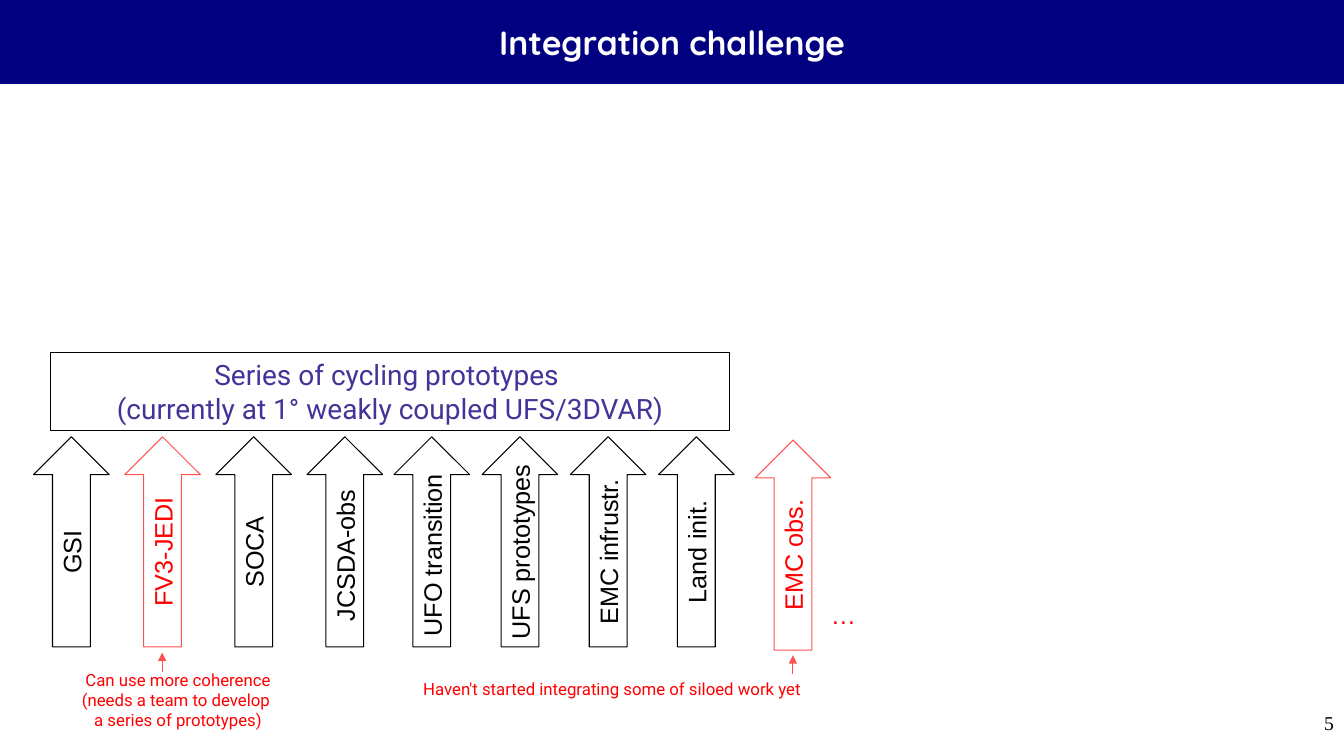
import pptx
import pptx.dml.color
import pptx.enum.dml
import pptx.enum.shapes
import pptx.enum.text
import pptx.oxml
import pptx.oxml.ns
import pptx.util

COLORS = {
    "banner": "000080",
    "white": "FFFFFF",
    "black": "000000",
    "red": "FF0000",
    "coral": "FF5050",
    "indigo": "453399",
}
CELL = pptx.util.Inches(1) / 12
COLUMNS, ROWS = 160, 90
ARROW_WIDTH, ARROW_HEIGHT = 9, 25
LABEL_HEIGHT, LABEL_DROP = 4.8, 1.2
ALIGN = pptx.enum.text.PP_ALIGN
PRESETS = pptx.enum.shapes.MSO_SHAPE


def cells(*lengths):
    return [round(length * CELL) for length in lengths]


def rgb(name):
    return pptx.dml.color.RGBColor.from_string(COLORS[name])


def write(shape, text, font, size, color, align=ALIGN.CENTER, bold=False):
    shape.text_frame.text = text
    for paragraph in shape.text_frame.paragraphs:
        paragraph.alignment = align
        for run in paragraph.runs:
            run.font.name = font
            run.font.size = pptx.util.Pt(size)
            run.font.bold = bold
            run.font.color.rgb = rgb(color)


def add_text(slide, box, text, font, size, color, align=ALIGN.CENTER):
    shape = slide.shapes.add_textbox(*cells(*box))
    write(shape, text, font, size, color, align)
    shape.text_frame.word_wrap = False
    shape.text_frame.auto_size = pptx.enum.text.MSO_AUTO_SIZE.SHAPE_TO_FIT_TEXT
    return shape


def add_outline(slide, preset, box, color):
    shape = slide.shapes.add_shape(preset, *cells(*box))
    shape.shadow.inherit = False
    shape.fill.background()
    shape.line.color.rgb = rgb(color)
    shape.line.width = pptx.util.Pt(0.75)
    return shape


def add_banner(slide, box, text):
    title = slide.shapes.title
    title.left, title.top, title.width, title.height = cells(*box)
    title.fill.solid()
    title.fill.fore_color.rgb = rgb("banner")
    write(title, text, "Quicksand", 24, "white", bold=True)
    title.text_frame.vertical_anchor = pptx.enum.text.MSO_ANCHOR.MIDDLE


def add_input_arrow(slide, left, top, label, length, pending=False, shift=0):
    box = (left, top, ARROW_WIDTH, ARROW_HEIGHT)
    add_outline(slide, PRESETS.UP_ARROW, box, "coral" if pending else "black")
    center = left + ARROW_WIDTH / 2
    middle = top + ARROW_HEIGHT / 2 + LABEL_DROP + shift
    label_box = (center - length / 2, middle - LABEL_HEIGHT / 2, length, LABEL_HEIGHT)
    text = add_text(slide, label_box, label, "Arial", 18, "red" if pending else "black")
    text.rotation = 270


def add_arrow_row(slide, left, top, pitch, inputs):
    for index, details in enumerate(inputs):
        add_input_arrow(slide, left + index * pitch, top, *details)


def add_prototype_box(slide, box, text):
    shape = add_outline(slide, PRESETS.RECTANGLE, box, "black")
    write(shape, text, "Roboto", 20, "indigo")
    shape.text_frame.vertical_anchor = pptx.enum.text.MSO_ANCHOR.TOP


def add_note(slide, box, text, align, pointer_column, pointer_bottom):
    add_text(slide, box, text, "Roboto", 12, "red", align)
    ends = cells(pointer_column, pointer_bottom, pointer_column, pointer_bottom - 2.3)
    pointer = slide.shapes.add_connector(pptx.enum.shapes.MSO_CONNECTOR.STRAIGHT, *ends)
    pointer.line.color.rgb = rgb("coral")
    pointer.line.width = pptx.util.Pt(0.75)
    properties = pointer.line._get_or_add_ln()
    tip = pptx.oxml.parse_xml(f'<a:tailEnd {pptx.oxml.ns.nsdecls("a")} type="triangle"/>')
    properties.append(tip)
    effects = pptx.oxml.parse_xml(f'<a:effectLst {pptx.oxml.ns.nsdecls("a")}/>')
    properties.addnext(effects)


def add_page_number(slide, box, number):
    shape = add_text(slide, box, number, "Times New Roman", 14, "black", ALIGN.RIGHT)
    shape.text_frame.word_wrap = True
    shape.text_frame.auto_size = pptx.enum.text.MSO_AUTO_SIZE.NONE


def main():
    presentation = pptx.Presentation()
    presentation.slide_width, presentation.slide_height = cells(COLUMNS, ROWS)
    slide = presentation.slides.add_slide(presentation.slide_layouts[5])

    add_banner(slide, (0, 0, COLUMNS, 10), "Integration challenge")
    add_page_number(slide, (126.7, 84, 33.3, 6), "5")
    add_arrow_row(slide, 4, 52, 10.85, [
        ("GSI", 7.7),
        ("FV3-JEDI", 15.6, True),
        ("SOCA", 11),
        ("JCSDA-obs", 18.2, False, 0.4),
    ])
    add_arrow_row(slide, 46.9, 52, 10.5, [
        ("UFO transition", 22, False, 0.4),
        ("UFS prototypes", 23.5),
        ("EMC infrustr.", 19.9),
        ("Land init.", 14.8),
    ])
    add_prototype_box(
        slide, (6, 42, 80.9, 9.25),
        "Series of cycling prototypes \n(currently at 1° weakly coupled UFS/3DVAR)",
    )
    add_input_arrow(slide, 89.9, 52.4, "EMC obs.", 15.7, True)
    add_text(slide, (97.7, 70.8, 5.4, 4.8), "…", "Arial", 18, "red")
    add_note(
        slide, (8.4, 79.1, 25.6, 8.5),
        "Can use more coherence\n(needs a team to develop \na series of prototypes)",
        ALIGN.CENTER, 19.3, 80,
    )
    add_note(
        slide, (49.2, 80.2, 47.6, 3.6),
        "Haven't started integrating some of siloed work yet",
        ALIGN.LEFT, 94.4, 80.3,
    )
    presentation.save("out.pptx")


if __name__ == "__main__":
    main()
